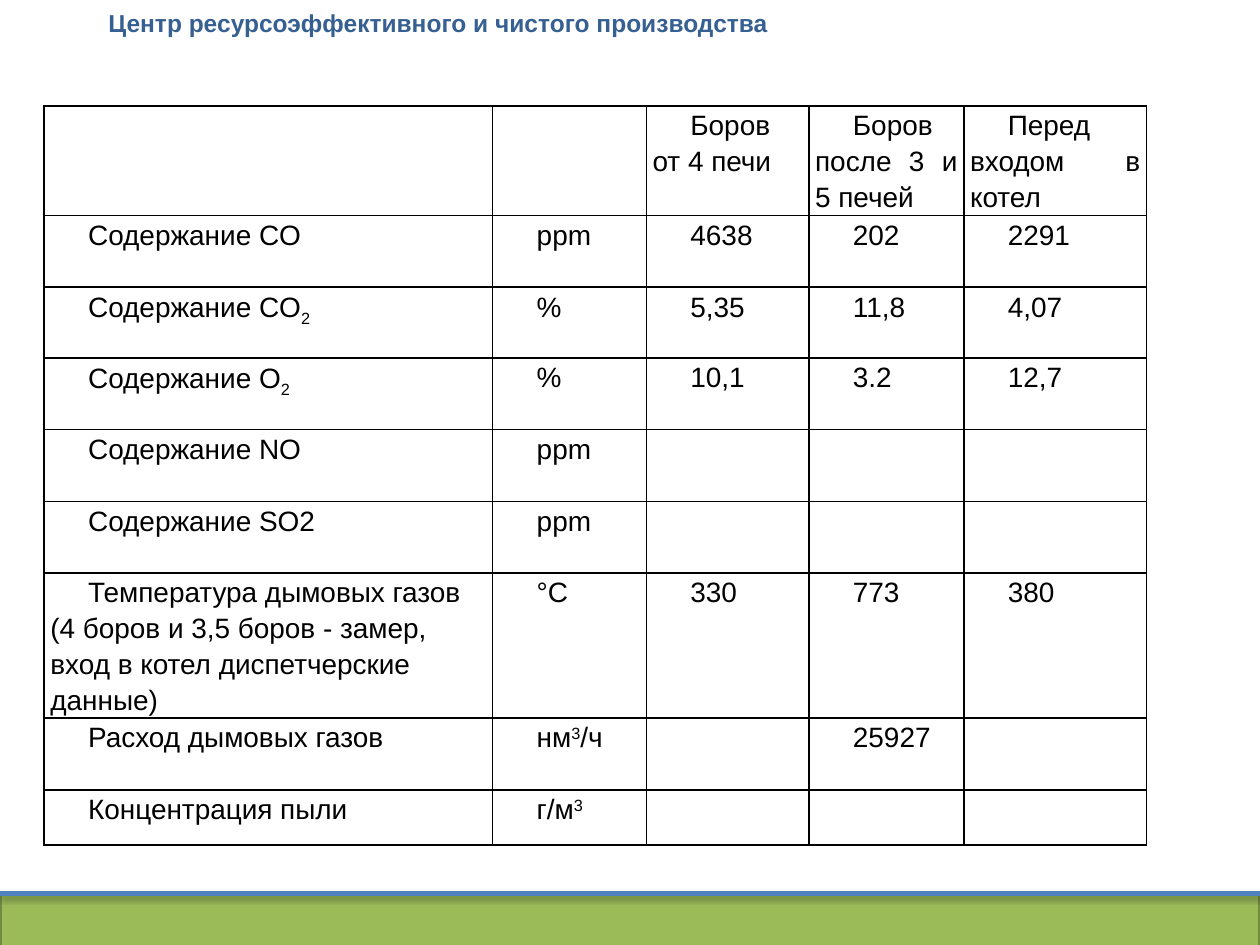
"""Build a slide with a table of flue gas measurements."""
import dataclasses

import pptx
import pptx.dml.color
import pptx.enum.shapes
import pptx.enum.text
import pptx.oxml
import pptx.oxml.ns
import pptx.util

Inches = pptx.util.Inches
Pt = pptx.util.Pt
RGBColor = pptx.dml.color.RGBColor
Align = pptx.enum.text.PP_ALIGN
Anchor = pptx.enum.text.MSO_ANCHOR

BLACK = RGBColor(0x00, 0x00, 0x00)
NAVY = RGBColor(0x37, 0x60, 0x92)
BLUE = RGBColor(0x4F, 0x81, 0xBD)
GREEN = RGBColor(0x9B, 0xBB, 0x59)
OLIVE = RGBColor(0x73, 0x8A, 0x42)

FONT = "Arial"
WIDTHS = (3.56, 1.22, 1.29, 1.23, 1.45)


@dataclasses.dataclass
class Row:
    """One table row; text between bars is raised or lowered."""
    height: float
    cells: tuple[str, ...]


ROWS = (
    Row(0.87, ("", "", "Боров от 4 печи", "Боров после 3 и 5 печей",
               "Перед входом в котел")),
    Row(0.57, ("Содержание CO", "ppm", "4638", "202", "2291")),
    Row(0.56, ("Содержание CO|2", "%", "5,35", "11,8", "4,07")),
    Row(0.57, ("Содержание O|2", "%", "10,1", "3.2", "12,7")),
    Row(0.57, ("Содержание NO", "ppm", "", "", "")),
    Row(0.57, ("Содержание SO2", "ppm", "", "", "")),
    Row(1.15, ("Температура дымовых газов (4 боров и 3,5 боров - замер, "
               "вход в котел диспетчерские данные)",
               "°С", "330", "773", "380")),
    Row(0.57, ("Расход дымовых газов", "нм|3|/ч", "", "25927", "")),
    Row(0.44, ("Концентрация пыли", "г/м|3", "", "", "")),
)


def add_xml(parent, body: str) -> None:
    """Append an element in the drawing namespace."""
    tag, rest = body[:body.index(" ")], body[body.index(" "):]
    space = pptx.oxml.ns.nsdecls("a")
    parent.append(pptx.oxml.parse_xml(f"<a:{tag} {space}{rest}"))


def set_title(slide) -> None:
    """Fill and place the title."""
    title = slide.shapes.title
    title.left, title.top = Inches(0.76), Inches(0.01)
    title.width, title.height = Inches(9.24), Inches(0.34)
    frame = title.text_frame
    frame.text = "Центр ресурсоэффективного и чистого производства"
    frame.vertical_anchor = Anchor.TOP
    para = frame.paragraphs[0]
    para.alignment = Align.LEFT
    font = para.font
    font.name, font.size, font.bold = FONT, Pt(14), True
    font.color.rgb = NAVY


def add_band(slide) -> None:
    """Draw the green footer and the blue rule above it."""
    top, wide = Inches(7.09), Inches(10)
    band = slide.shapes.add_shape(
        pptx.enum.shapes.MSO_SHAPE.RECTANGLE, 0, top, wide, Inches(0.44))
    band.shadow.inherit = False
    band.fill.solid()
    band.fill.fore_color.rgb = GREEN
    band.line.color.rgb = OLIVE
    band.line.width = Pt(2)
    rule = slide.shapes.add_connector(
        pptx.enum.shapes.MSO_CONNECTOR.STRAIGHT, 0, top, wide, top)
    rule.line.color.rgb = BLUE
    rule.line.width = Pt(3)
    blur, dist = Pt(3.1), Pt(1.8)
    add_xml(rule.element.spPr, (
        f'effectLst ><a:outerShdw blurRad="{blur}" dist="{dist}" '
        'dir="5400000" rotWithShape="0"><a:srgbClr val="000000">'
        '<a:alpha val="35000"/></a:srgbClr></a:outerShdw></a:effectLst>'))


def fill_cell(cell, text: str, col: int) -> None:
    """Border one cell and write its text."""
    cell.margin_left = cell.margin_right = Inches(0.05)
    cell.margin_top = cell.margin_bottom = 0
    props = cell._tc.get_or_add_tcPr()
    for side in "LRTB":
        add_xml(props, (
            f'ln{side} w="{Pt(1)}"><a:solidFill><a:srgbClr val="{BLACK}"/>'
            f'</a:solidFill></a:ln{side}>'))
    cell.fill.background()
    if not text:
        return
    para = cell.text_frame.paragraphs[0]
    para.alignment = Align.JUSTIFY if col > 2 else Align.LEFT
    para.line_spacing = 1.15
    pros = para._p.get_or_add_pPr()
    pros.set("marL", "0")
    pros.set("indent", str(Inches(0.3)))
    for spot, part in enumerate(text.split("|")):
        run = para.add_run()
        run.text = part
        if spot % 2:
            shift = 30000 if col else -25000
            run.font._element.set("baseline", str(shift))
    font = para.font
    font.name, font.size = FONT, Pt(16)
    font.color.rgb = BLACK


def add_grid(slide) -> None:
    """Add the table of measurements."""
    high = sum(row.height for row in ROWS)
    table = slide.shapes.add_table(
        len(ROWS), len(WIDTHS), Inches(0.35), Inches(0.84),
        Inches(sum(WIDTHS)), Inches(high)).table
    table.first_row = table.horz_banding = False
    for col, width in enumerate(WIDTHS):
        table.columns[col].width = Inches(width)
    for num, row in enumerate(ROWS):
        table.rows[num].height = Inches(row.height)
        for col, text in enumerate(row.cells):
            fill_cell(table.cell(num, col), text, col)


def main() -> None:
    """Build and save the deck."""
    deck = pptx.Presentation()
    deck.slide_width, deck.slide_height = Inches(10), Inches(7.5)
    slide = deck.slides.add_slide(deck.slide_layouts[5])
    set_title(slide)
    add_band(slide)
    add_grid(slide)
    deck.save("out.pptx")


if __name__ == "__main__":
    main()
